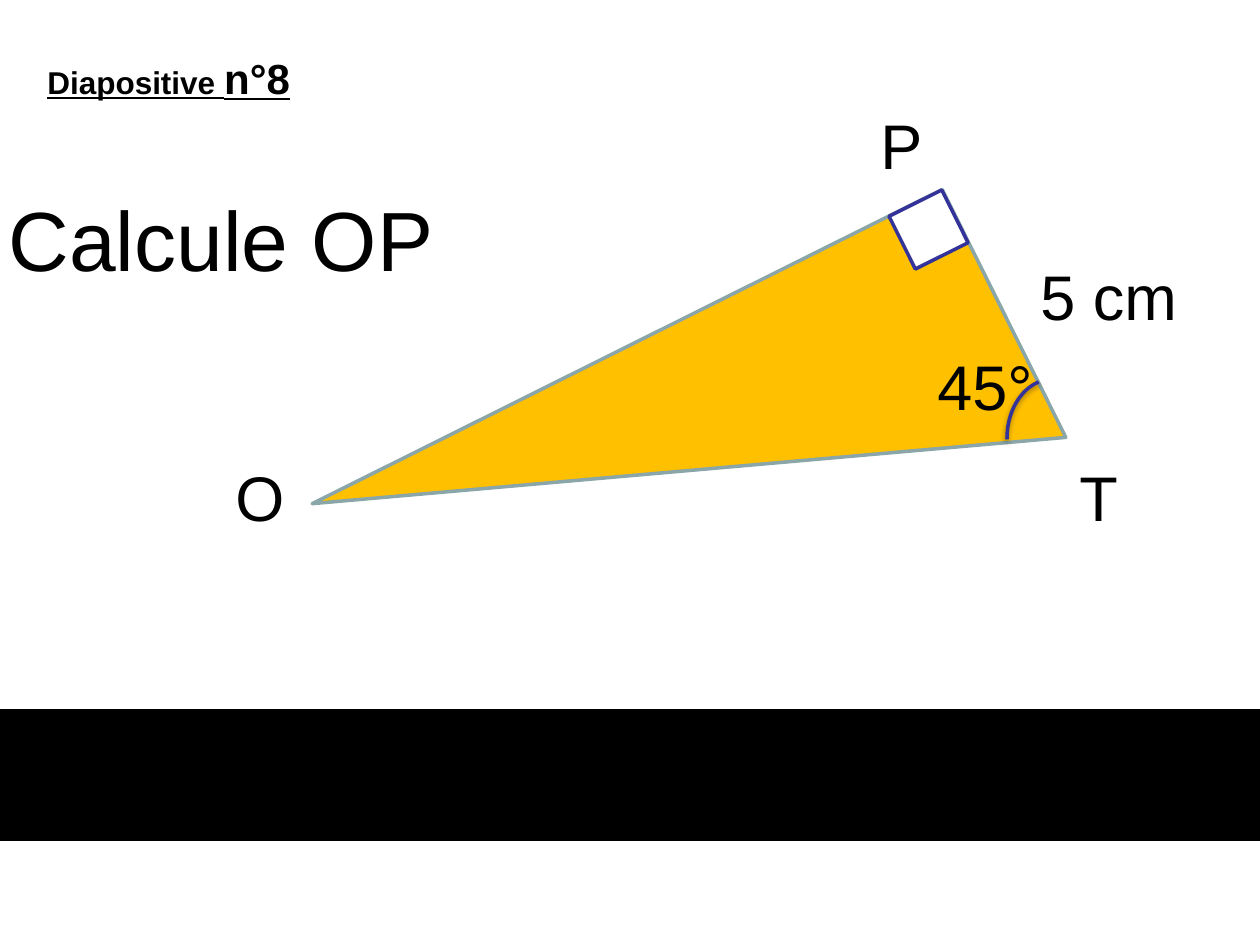
from dataclasses import dataclass
from typing import Optional

from lxml import etree
from pptx import Presentation
from pptx.dml.color import RGBColor
from pptx.enum.shapes import MSO_SHAPE
from pptx.enum.text import MSO_ANCHOR, MSO_AUTO_SIZE, PP_ALIGN
from pptx.oxml.ns import qn
from pptx.util import Emu, Pt

RIGHT_TRIANGLE = MSO_SHAPE.RIGHT_TRIANGLE
RECTANGLE = MSO_SHAPE.RECTANGLE
ARC = MSO_SHAPE.ARC
TOP = MSO_ANCHOR.TOP
MIDDLE = MSO_ANCHOR.MIDDLE
LEFT = PP_ALIGN.LEFT
FIT_SHAPE = MSO_AUTO_SIZE.SHAPE_TO_FIT_TEXT
NO_FIT = MSO_AUTO_SIZE.NONE

EMU_PER_INCH = 914400
PX_PER_INCH = 126
FONT = "Arial"
BLACK = "000000"
WHITE = "FFFFFF"
AMBER = "FFC000"
GREY_GREEN = "8AA6A8"
INDIGO = "333399"
LABEL_HEIGHT = 89


@dataclass(frozen=True)
class Label:
    text: str
    left: int
    top: int
    width: int


@dataclass(frozen=True)
class Figure:
    kind: MSO_SHAPE
    left: int
    top: int
    width: int
    height: int
    line: str
    fill: Optional[str] = None
    rotation: float = 0


LABELS = [
    Label("P", 868, 100, 68),
    Label("O", 223, 452, 74),
    Label("T", 1067, 452, 64),
    Label("5 cm", 1028, 251, 164),
    Label("45°", 925, 341, 121),
]
TRIANGLE = Figure(RIGHT_TRIANGLE, 337, 332, 704, 277, GREY_GREEN, AMBER, 153.5)
RIGHT_ANGLE = Figure(RECTANGLE, 899, 200, 59, 59, INDIGO, WHITE, 153.5)
ANGLE_ARC = Figure(ARC, 994, 392, 118, 92, INDIGO, rotation=270)
BAND = Figure(RECTANGLE, 0, 711, 1260, 128, BLACK, BLACK)


def px(length: int) -> Emu:
    return Emu(round(length * EMU_PER_INCH / PX_PER_INCH))


def color(code: str) -> RGBColor:
    return RGBColor.from_string(code)


def place(shape, left: int, top: int, width: int, height: int) -> None:
    shape.left, shape.top = px(left), px(top)
    shape.width, shape.height = px(width), px(height)


def write(box, text: str, *, size: int, bold: bool = False, underline: bool = False,
          anchor=TOP, wrap: bool = True, fit=FIT_SHAPE) -> None:
    frame = box.text_frame
    frame.word_wrap = wrap
    frame.auto_size = fit
    frame.vertical_anchor = anchor
    para = frame.paragraphs[0]
    para.alignment = LEFT
    span = para.add_run()
    span.text = text
    font = span.font
    font.name, font.size = FONT, Pt(size)
    font.bold, font.underline = bold, underline
    font.color.rgb = color(BLACK)


def add_box(page, left: int, top: int, width: int, height: int):
    return page.shapes.add_textbox(px(left), px(top), px(width), px(height))


def draw_label(page, label: Label) -> None:
    box = add_box(page, label.left, label.top, label.width, LABEL_HEIGHT)
    write(box, label.text, size=36, wrap=False)


def draw_figure(page, figure: Figure):
    shape = page.shapes.add_shape(figure.kind, px(figure.left), px(figure.top),
                                  px(figure.width), px(figure.height))
    shape.shadow.inherit = False
    shape.rotation = figure.rotation
    shape.line.color.rgb = color(figure.line)
    shape.line.width = Pt(2)
    if figure.fill:
        shape.fill.solid()
        shape.fill.fore_color.rgb = color(figure.fill)
    else:
        shape.fill.background()
    return shape


def set_arc(arc, start: float, end: float) -> None:
    for index, degrees in enumerate((start, end)):
        arc.adjustments[index] = degrees * 0.6


def add_shadow(shape, code: str, opacity: int, blur: float, distance: float) -> None:
    effects = shape.element.spPr.find(qn("a:effectLst"))
    shadow = etree.SubElement(effects, qn("a:outerShdw"), blurRad=str(Pt(blur)),
                              dist=str(Pt(distance)), dir="5400000", rotWithShape="0")
    tint = etree.SubElement(shadow, qn("a:srgbClr"), val=code)
    etree.SubElement(tint, qn("a:alpha"), val=str(opacity * 1000))


def main() -> None:
    deck = Presentation()
    deck.slide_width, deck.slide_height = px(1260), px(945)
    page = deck.slides.add_slide(deck.slide_layouts[5])

    title = page.shapes.title
    place(title, -4, 136, 1221, 203)
    write(title, "Calcule OP", size=48, anchor=MIDDLE, fit=NO_FIT)

    heading = add_box(page, 35, 46, 605, 64)
    write(heading, "Diapositive ", size=18, bold=True, underline=True)
    write(heading, "n°8", size=24, bold=True, underline=True)
    heading.text_frame.paragraphs[0].space_before = Pt(3)

    for figure in (TRIANGLE, RIGHT_ANGLE, BAND):
        draw_figure(page, figure)
    arc = draw_figure(page, ANGLE_ARC)
    set_arc(arc, 268.18, 345.67)
    add_shadow(arc, BLACK, 38, 3.1, 1.6)

    for label in LABELS:
        draw_label(page, label)

    deck.save("out.pptx")


if __name__ == "__main__":
    main()
